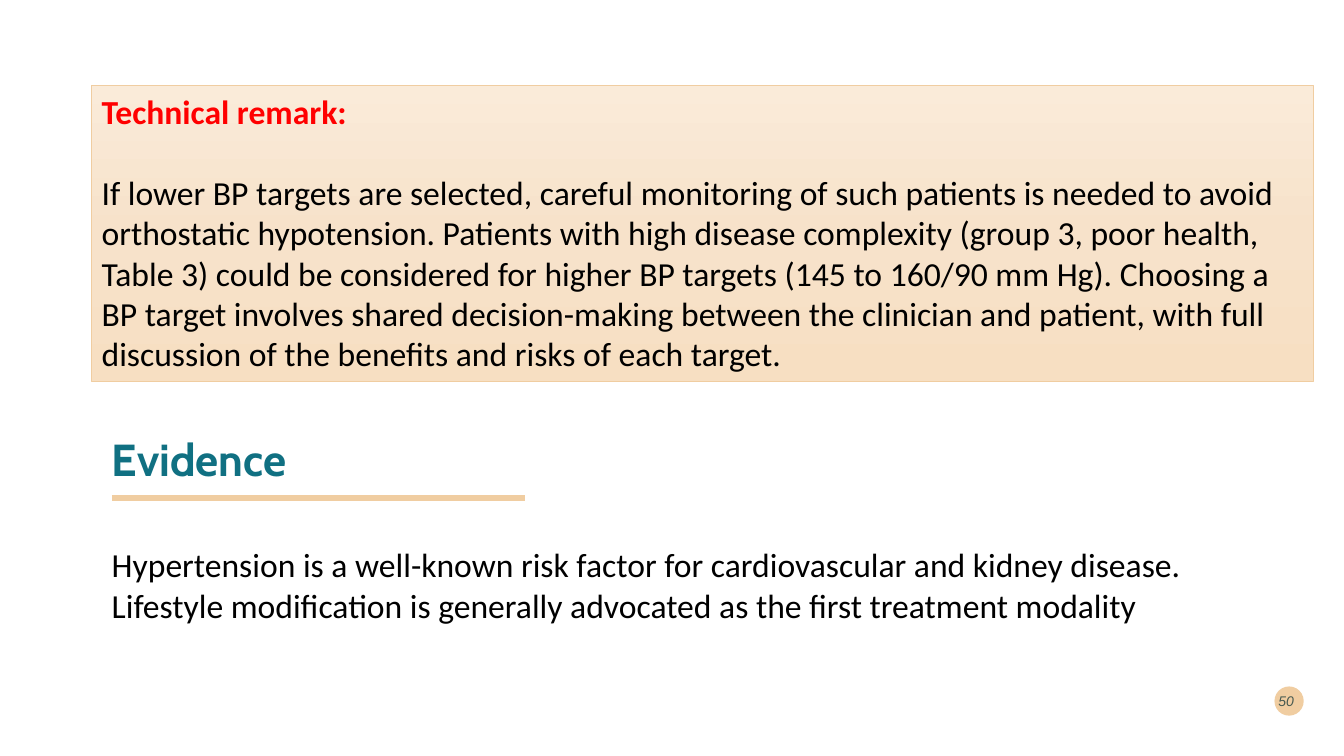
from copy import deepcopy
from dataclasses import dataclass

from lxml import etree
from pptx import Presentation
from pptx import util as u
from pptx.dml.color import RGBColor
from pptx.enum import shapes, text
from pptx.oxml.ns import qn

PX = u.Inches(1) // 100
SAND, TEAL, RED, BLACK, DARK = "F0CDA1", "107082", "FF0000", "000000", "00292E"
REMARK_STOPS = [(0, "FAEBD9"), (0.5, "F7E2CA"), (1, "F7DFC2")]


@dataclass(frozen=True)
class Box:
    left: int
    top: int
    width: int
    height: int

    def emu(self) -> list[int]:
        return [side * PX for side in (self.left, self.top, self.width, self.height)]


def rgb(value: str) -> RGBColor:
    return RGBColor.from_string(value)


def write(paragraph, words: str, *, size: int = 24, font: str = "Calibri", color: str = BLACK,
          bold: bool = False, italic: bool = False, align=text.PP_ALIGN.LEFT,
          spacing: float | None = None, after: float | None = None,
          alpha: int | None = None) -> None:
    paragraph.alignment = align
    paragraph.line_spacing = spacing
    paragraph.space_after = None if after is None else u.Pt(after)
    run = paragraph.add_run()
    run.text = words
    run.font.size, run.font.name = u.Pt(size), font
    run.font.bold, run.font.italic = bold, italic
    run.font.color.rgb = rgb(color)
    if alpha is not None:
        tint = run._r.find(".//" + qn("a:srgbClr"))
        etree.SubElement(tint, qn("a:alpha")).set("val", str(alpha * 1000))


def add_text(slide, box: Box, words: str, anchor=text.MSO_ANCHOR.TOP, **style) -> None:
    frame = slide.shapes.add_textbox(*box.emu()).text_frame
    frame.word_wrap = True
    frame.vertical_anchor = anchor
    write(frame.paragraphs[0], words, **style)


def add_panel(slide, kind, box: Box):
    panel = slide.shapes.add_shape(kind, *box.emu())
    panel.shadow.inherit = False
    return panel


def add_remark(slide) -> None:
    remark = add_panel(slide, shapes.MSO_SHAPE.RECTANGLE, Box(91, 85, 1212, 293))
    remark.fill.gradient()
    remark.fill.gradient_angle = 270
    first_stop = remark._element.spPr.find(".//" + qn("a:gs"))
    first_stop.addnext(deepcopy(first_stop))
    for stop, (position, color) in zip(remark.fill.gradient_stops, REMARK_STOPS):
        stop.position = position
        stop.color.rgb = rgb(color)
    remark.line.color.rgb = rgb(SAND)
    remark.line.width = u.Pt(0.5)
    frame = remark.text_frame
    frame.word_wrap = True
    frame.vertical_anchor = text.MSO_ANCHOR.TOP
    write(frame.paragraphs[0], "Technical remark:", color=RED, bold=True, after=29.3)
    write(
        frame.add_paragraph(),
        "If lower BP targets are selected, careful monitoring of such patients is needed to avoid "
        "orthostatic hypotension. Patients with high disease complexity (group 3, poor health, "
        "Table 3) could be considered for higher BP targets (145 to 160/90 mm Hg). Choosing a "
        "BP target involves shared decision-making between the clinician and patient, with full "
        "discussion of the benefits and risks of each target.",
    )


def add_underline(slide, left: int, right: int, y: int) -> None:
    underline = slide.shapes.add_connector(
        shapes.MSO_CONNECTOR.STRAIGHT, left * PX, y * PX, right * PX, y * PX)
    underline.line.color.rgb = rgb(SAND)
    underline.line.width = u.Pt(4.32)
    etree.SubElement(underline._element.spPr, qn("a:effectLst"))


def main() -> None:
    deck = Presentation()
    deck.slide_width, deck.slide_height = 1333 * PX, 750 * PX
    slide = deck.slides.add_slide(deck.slide_layouts[6])

    number_disc = add_panel(slide, shapes.MSO_SHAPE.OVAL, Box(1264, 681, 29, 29))
    number_disc.fill.solid()
    number_disc.fill.fore_color.rgb = rgb(SAND)
    number_disc.line.fill.background()

    add_text(slide, Box(101, 386, 1150, 145), "Evidence", text.MSO_ANCHOR.MIDDLE,
             size=32, font="Cabin", color=TEAL, bold=True, spacing=0.9)
    add_text(slide, Box(1254, 675, 39, 40), "50", text.MSO_ANCHOR.MIDDLE,
             size=10, font="Arial", color=DARK, italic=True,
             align=text.PP_ALIGN.RIGHT, alpha=70)
    add_underline(slide, 111, 521, 494)
    add_text(slide, Box(101, 535, 1192, 91),
             "Hypertension is a well-known risk factor for cardiovascular and kidney disease. "
             "Lifestyle modification is generally advocated as the first treatment modality")
    add_remark(slide)
    deck.save("out.pptx")


if __name__ == "__main__":
    main()
